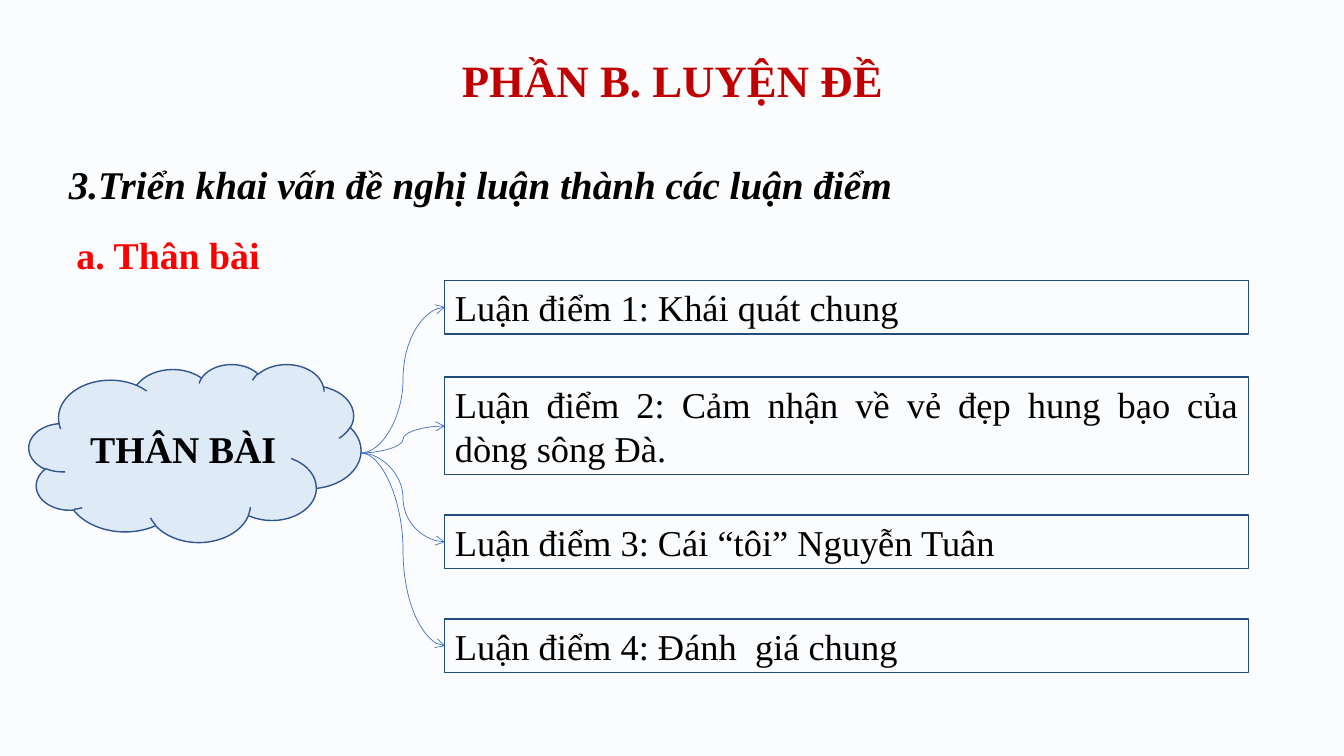
"""Build a slide that maps the body of an essay to its four arguments."""
import pptx
import pptx.dml.color
import pptx.enum.shapes
import pptx.enum.text
import pptx.oxml
import pptx.oxml.ns
import pptx.util

PX = 12192000 / 1344
FONT = "Times New Roman"
COLORS = {
    "background": "FBFCFE", "title": "C00000", "subheading": "FF0000", "text": "000000",
    "box line": "1F4E79", "cloud": "DEEBF7", "cloud line": "325491", "arrow": "4472C4",
}
ALIGN = pptx.enum.text.PP_ALIGN
ANCHOR = pptx.enum.text.MSO_ANCHOR
SHAPE = pptx.enum.shapes.MSO_SHAPE


def rgb(name):
    return pptx.dml.color.RGBColor.from_string(COLORS[name])


def write(part, text, size, color="text", align=ALIGN.JUSTIFY, anchor=ANCHOR.TOP,
          bold=True, italic=False, spacing=1.0, wrap=True):
    frame = part.text_frame
    frame.word_wrap = wrap
    frame.vertical_anchor = anchor
    paragraph = frame.paragraphs[0]
    paragraph.text = text
    paragraph.alignment = align
    paragraph.line_spacing = spacing
    paragraph.font.name = FONT
    paragraph.font.size = pptx.util.Pt(size)
    paragraph.font.bold = bold
    paragraph.font.italic = italic
    paragraph.font.color.rgb = rgb(color)


deck = pptx.Presentation()
deck.slide_width = round(1344 * PX)
deck.slide_height = round(756 * PX)
slide = deck.slides.add_slide(deck.slide_layouts[6])
slide.background.fill.solid()
slide.background.fill.fore_color.rgb = rgb("background")

headings = [
    ((93, 40, 1159, 87), "PHẦN B. LUYỆN ĐỀ", 32,
     dict(color="title", align=ALIGN.CENTER, anchor=ANCHOR.MIDDLE, spacing=0.9)),
    ((59, 132, 1208, 73), "3.Triển khai vấn đề nghị luận thành các luận điểm", 28,
     dict(italic=True, spacing=1.5)),
    ((65, 227, 206, 56), "a. Thân bài", 27,
     dict(color="subheading", align=ALIGN.CENTER, wrap=False)),
]
for place, text, size, style in headings:
    heading = slide.shapes.add_textbox(*(round(v * PX) for v in place))
    write(heading, text, size, **style)

cloud = slide.shapes.add_shape(SHAPE.CLOUD, *(round(v * PX) for v in (29, 364, 332, 178)))
cloud.shadow.inherit = False
cloud.fill.solid()
cloud.fill.fore_color.rgb = rgb("cloud")
cloud.line.color.rgb = rgb("cloud line")
cloud.line.width = pptx.util.Pt(1)
write(cloud, "THÂN BÀI", 27, align=ALIGN.CENTER, anchor=ANCHOR.MIDDLE)

arguments = [
    (280, 54, "Luận điểm 1: Khái quát chung"),
    (377, 98, "Luận điểm 2: Cảm nhận về vẻ đẹp hung bạo của dòng sông Đà."),
    (515, 54, "Luận điểm 3: Cái “tôi” Nguyễn Tuân"),
    (619, 54, "Luận điểm 4: Đánh  giá chung"),
]
for top, height, text in arguments:
    argument = slide.shapes.add_shape(
        SHAPE.RECTANGLE, *(round(v * PX) for v in (445, top, 804, height)))
    argument.shadow.inherit = False
    argument.fill.background()
    argument.line.color.rgb = rgb("box line")
    argument.line.width = pptx.util.Pt(0.75)
    write(argument, text, 26, bold=False)

    arrow = slide.shapes.add_connector(
        pptx.enum.shapes.MSO_CONNECTOR.CURVE,
        *(round(v * PX) for v in (361, 453, 445, top + height / 2)))
    arrow.begin_connect(cloud, 0)
    arrow.begin_x, arrow.begin_y = round(361 * PX), round(453 * PX)
    arrow.end_connect(argument, 1)
    arrow.line.color.rgb = rgb("arrow")
    arrow.line.width = pptx.util.Pt(0.5)
    head = pptx.oxml.parse_xml(f'<a:tailEnd {pptx.oxml.ns.nsdecls("a")} type="arrow"/>')
    arrow.line._get_or_add_ln().append(head)
    effects = pptx.oxml.parse_xml(f'<a:effectLst {pptx.oxml.ns.nsdecls("a")}/>')
    arrow._element.spPr.append(effects)

deck.save("out.pptx")
